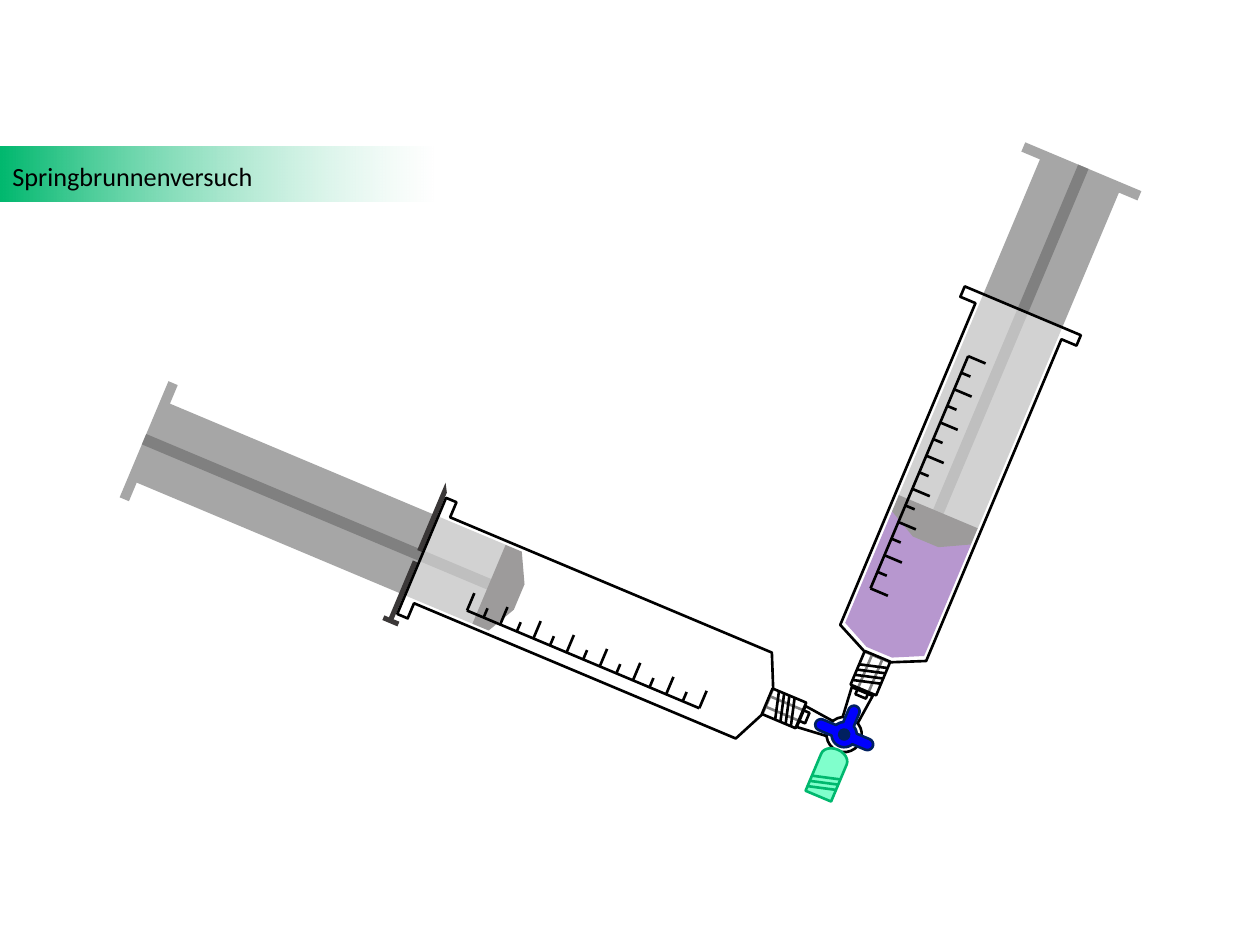
from dataclasses import dataclass
from math import cos, radians, sin
from typing import Optional

from pptx import Presentation, util as u
from pptx.dml.color import RGBColor
from pptx.enum import shapes, text
from pptx.oxml.ns import qn
from pptx.oxml.xmlchemy import OxmlElement

Point = tuple[float, float]


@dataclass(frozen=True)
class Theme:
    white: str = "FFFFFF"
    ink: str = "000000"
    green: str = "00B86E"
    mint: str = "80FFCC"
    blue: str = "0000FF"
    navy: str = "002060"
    liquid: str = "7030A0"
    plunger: str = "A6A6A6"
    rod: str = "808080"
    rubber: str = "3B3838"
    font: str = "Calibri"
    title_size: float = 15
    line_width: float = 1.5


@dataclass(frozen=True)
class Style:
    fill: Optional[str] = None
    line: Optional[str] = None
    opacity: int = 100


@dataclass(frozen=True)
class Frame:
    x: float
    y: float
    angle: float

    def place(self, point: Point) -> Point:
        along, across = point
        c, s = cos(radians(self.angle)), sin(radians(self.angle))
        return self.x + along * c - across * s, self.y + along * s + across * c


@dataclass(frozen=True)
class Syringe:
    frame: Frame
    plunger: float
    filled: bool = False
    clamped: bool = False


THEME = Theme()
GLASS = Style(THEME.white, THEME.ink, 50)
OUTLINE = Style(line=THEME.ink)


def set_opacity(shape, percent: int) -> None:
    alpha = OxmlElement("a:alpha")
    alpha.set("val", str(percent * 1000))
    next(shape._element.spPr.iter(qn("a:srgbClr"))).append(alpha)


def apply_style(shape, style: Style) -> None:
    shape.shadow.inherit = False
    if style.fill:
        shape.fill.solid()
        shape.fill.fore_color.rgb = RGBColor.from_string(style.fill)
        if style.opacity < 100:
            set_opacity(shape, style.opacity)
    else:
        shape.fill.background()
    if style.line:
        shape.line.color.rgb = RGBColor.from_string(style.line)
        shape.line.width = u.Pt(THEME.line_width)
    else:
        shape.line.fill.background()


def draw_preset(group, kind, frame: Frame, center: Point, size: Point, style: Style) -> None:
    (x, y), (w, h) = frame.place(center), size
    shape = group.shapes.add_shape(kind, u.Inches(x - w / 2), u.Inches(y - h / 2),
                                   u.Inches(w), u.Inches(h))
    shape.rotation = frame.angle
    apply_style(shape, style)


def draw_outline(group, frame: Frame, points: list[Point], style: Style) -> None:
    corners = [(u.Inches(x), u.Inches(y)) for x, y in points]
    builder = group.shapes.build_freeform(*corners[0])
    builder.add_line_segments(corners[1:], close=True)
    shape = builder.convert_to_shape()
    xs, ys = zip(*points)
    x, y = frame.place(((min(xs) + max(xs)) / 2, (min(ys) + max(ys)) / 2))
    shape.left = u.Inches(x) - shape.width // 2
    shape.top = u.Inches(y) - shape.height // 2
    shape.rotation = frame.angle
    apply_style(shape, style)


def draw_line(group, frame: Frame, start: Point, end: Point, color: str) -> None:
    ends = [u.Inches(value) for point in (start, end) for value in frame.place(point)]
    line = group.shapes.add_connector(shapes.MSO_CONNECTOR.STRAIGHT, *ends)
    line.line.color.rgb = RGBColor.from_string(color)
    line.line.width = u.Pt(THEME.line_width)
    line._element.spPr.append(OxmlElement("a:effectLst"))


def draw_thread(group, frame: Frame, first: float, turns: int, color: str) -> None:
    for turn in range(turns):
        along = first + 0.045 * turn
        draw_line(group, frame, (along, -0.11), (along + 0.06, 0.11), color)


def mirrored(half: list[Point]) -> list[Point]:
    return half + [(x, -y) for x, y in reversed(half)]


def arc(center: Point, radii: Point, start: float, end: float, steps: int = 12) -> list[Point]:
    angles = [radians(start + (end - start) * i / steps) for i in range(steps + 1)]
    return [(center[0] + radii[0] * cos(a), center[1] + radii[1] * sin(a)) for a in angles]


def draw_scale(group, frame: Frame) -> None:
    first, step, base = -0.99, 2 / 7, 0.26
    draw_line(group, frame, (first, base), (first + 2, base), THEME.ink)
    for mark in range(15):
        along = first + mark * step / 2
        top = 0.18 if mark % 2 else 0.11
        draw_line(group, frame, (along, top), (along, base), THEME.ink)


def draw_syringe(slide, syringe: Syringe) -> None:
    group = slide.shapes.add_group_shape()
    frame, shift = syringe.frame, syringe.plunger
    rectangle = shapes.MSO_SHAPE.RECTANGLE
    if syringe.filled:
        liquid = Style(THEME.liquid)
        draw_outline(group, frame, mirrored([(1.3, -0.34), (1.34, -0.34), (1.45, -0.11)]), liquid)
        draw_preset(group, rectangle, frame, (0.84, 0), (0.93, 0.68), liquid)
    plunger = mirrored([(-1.49, -0.5), (-1.41, -0.5), (-1.41, -0.34), (1.49, -0.34)])
    stopper = mirrored([(1.48, -0.34), (1.62, -0.34), (1.74, -0.11)])
    for half_points, color in ((plunger, THEME.plunger), (stopper, THEME.rubber)):
        draw_outline(group, frame, [(x + shift, y) for x, y in half_points], Style(color))
        if color == THEME.plunger:
            draw_preset(group, rectangle, frame, (shift + 0.05, 0), (3.08, 0.09), Style(THEME.rod))
    if syringe.clamped:
        blade = [(-1.54, -0.61), (-1.5, -0.54), (-1.5, -0.03), (-1.54, -0.03)]
        nail = [(-1.54, 0.06), (-1.5, 0.06), (-1.5, 0.55), (-1.45, 0.55),
                (-1.45, 0.59), (-1.58, 0.59), (-1.58, 0.55), (-1.54, 0.55)]
        for part in (blade, nail):
            draw_outline(group, frame, part, Style(THEME.rubber))
    draw_preset(group, rectangle, frame, (1.66, 0), (0.34, 0.09), OUTLINE)
    barrel = mirrored([(-1.49, -0.5), (-1.4, -0.5), (-1.4, -0.37), (1.37, -0.37), (1.49, -0.11)])
    draw_outline(group, frame, barrel, GLASS)
    draw_preset(group, rectangle, frame, (1.63, 0), (0.29, 0.22), GLASS)
    draw_thread(group, frame, 1.54, 4, THEME.ink)
    draw_scale(group, frame)


def draw_stopcock(slide, x: float, y: float, tilt: float) -> None:
    group = slide.shapes.add_group_shape()
    upright, sideways = Frame(x, y, tilt), Frame(x, y, tilt + 270)
    oval = shapes.MSO_SHAPE.OVAL
    for frame in (sideways, upright):
        port = [(-0.09, -0.37), (0.09, -0.37), (0.06, -0.08), (-0.06, -0.08)]
        draw_outline(group, frame, port, GLASS)
    draw_preset(group, oval, sideways, (0, 0), (0.28, 0.28), Style(THEME.white, THEME.ink))
    cap = [(-0.53, -0.11)] + arc((-0.21, 0), (0.08, 0.11), -90, 90) + [(-0.53, 0.11)]
    draw_outline(group, sideways, cap, Style(THEME.mint, THEME.green))
    draw_thread(group, sideways, -0.49, 3, THEME.green)
    handle = []
    for arm, following in ((0, 90), (90, 180), (180, 360)):
        tip = (0.2 * cos(radians(arm)), 0.2 * sin(radians(arm)))
        handle += arc(tip, (0.045, 0.045), arm - 90, arm + 90)
        handle += arc((0, 0), (0.1, 0.1), arm + 27, following - 27)
    draw_outline(group, Frame(x, y, tilt + 180), handle, Style(THEME.blue, THEME.navy))
    draw_preset(group, oval, upright, (0, 0), (0.1, 0.1), Style(THEME.navy))


def draw_title(slide, title: str) -> None:
    band = slide.shapes.add_shape(shapes.MSO_SHAPE.RECTANGLE, u.Inches(0), u.Inches(1.16),
                                  u.Inches(3.44), u.Inches(0.44))
    apply_style(band, Style())
    band.fill.gradient()
    band.fill.gradient_angle = 180
    for stop, color in zip(band.fill.gradient_stops, (THEME.white, THEME.green)):
        stop.color.rgb = RGBColor.from_string(color)
    set_opacity(band, 42)

    label = slide.shapes.add_textbox(u.Inches(0), u.Inches(1.22), u.Inches(2.13), u.Inches(0.35))
    label.text_frame.word_wrap = False
    label.text_frame.auto_size = text.MSO_AUTO_SIZE.SHAPE_TO_FIT_TEXT
    paragraph = label.text_frame.paragraphs[0]
    paragraph.text = title
    paragraph.font.name = THEME.font
    paragraph.font.size = u.Pt(THEME.title_size)
    paragraph.font.color.rgb = RGBColor.from_string(THEME.ink)


def main() -> None:
    deck = Presentation()
    deck.slide_width, deck.slide_height = u.Inches(10), u.Inches(7.5)
    slide = deck.slides.add_slide(deck.slide_layouts[6])
    tilt = 22.8
    draw_title(slide, "Springbrunnenversuch")
    draw_stopcock(slide, 6.7, 5.83, tilt)
    draw_syringe(slide, Syringe(Frame(7.54, 3.84, tilt + 90), -1.24, filled=True))
    draw_syringe(slide, Syringe(Frame(4.72, 4.99, tilt), -2.39, clamped=True))
    deck.save("out.pptx")


if __name__ == "__main__":
    main()
